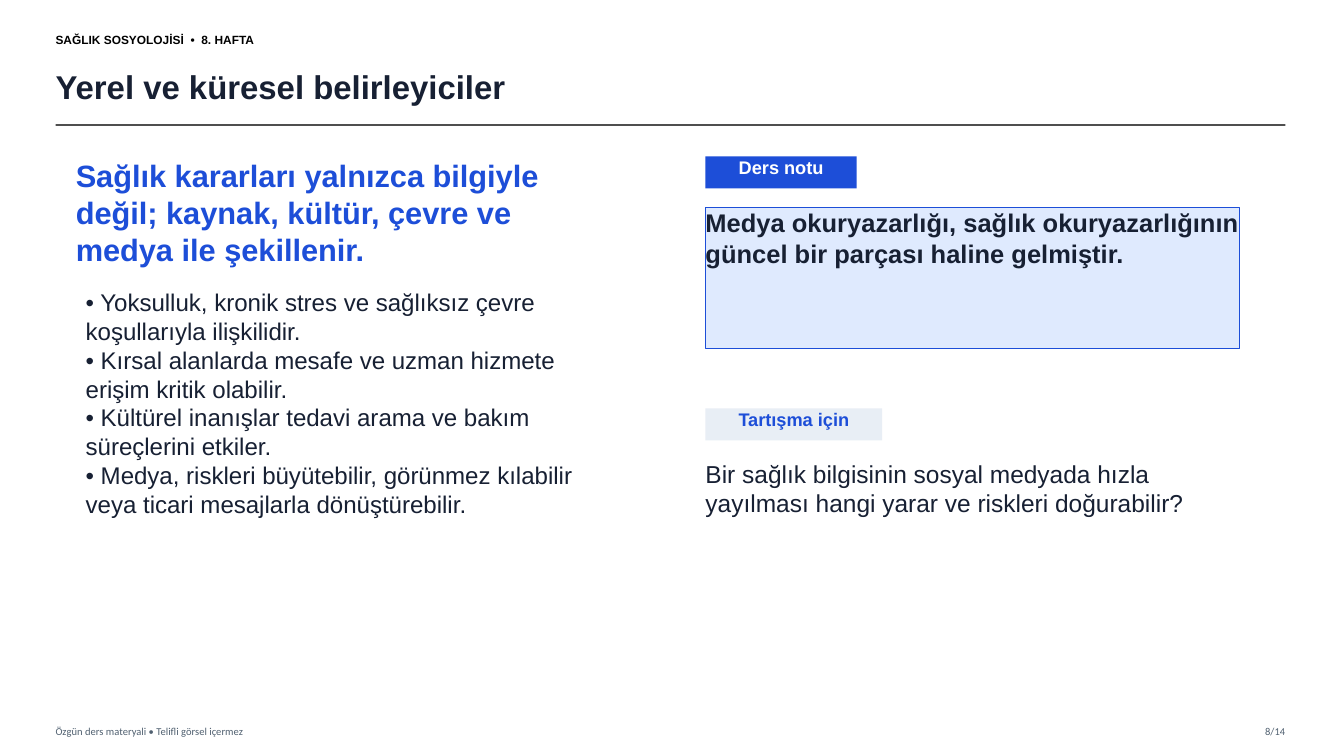
import dataclasses

import lxml.etree
import pptx
import pptx.dml.color
import pptx.enum.shapes
import pptx.enum.text
import pptx.oxml.ns
import pptx.util

Cm = pptx.util.Cm
Align = pptx.enum.text.PP_ALIGN
Anchor = pptx.enum.text.MSO_ANCHOR


@dataclasses.dataclass(frozen=True)
class TextStyle:
    size: float
    color: str
    bold: bool = False
    font: str = "Arial"


@dataclasses.dataclass(frozen=True)
class Theme:
    background: str = "FFFFFF"
    rule: str = "333333"
    accent: str = "1D4ED8"
    note_fill: str = "DFEAFE"
    label_fill: str = "E8EEF5"
    course: TextStyle = TextStyle(8.5, "000000", True)
    title: TextStyle = TextStyle(23.5, "172033", True)
    message: TextStyle = TextStyle(22, "1D4ED8", True)
    body: TextStyle = TextStyle(17.2, "172033")
    note: TextStyle = TextStyle(18.2, "172033", True)
    question: TextStyle = TextStyle(17.5, "172033")
    light_label: TextStyle = TextStyle(13, "FFFFFF", True)
    accent_label: TextStyle = TextStyle(13, "1D4ED8", True)
    footer: TextStyle = TextStyle(7.5, "506070", font="Calibri")


def rgb(color):
    return pptx.dml.color.RGBColor.from_string(color)


class SlideBuilder:
    def __init__(self, slide, theme):
        self.slide = slide
        self.theme = theme
        slide.background.fill.solid()
        slide.background.fill.fore_color.rgb = rgb(theme.background)

    def fill_text(self, shape, text, style, align=Align.LEFT, anchor=Anchor.TOP):
        frame = shape.text_frame
        frame.text = text
        frame.word_wrap = True
        frame.vertical_anchor = anchor
        frame.margin_left = frame.margin_right = 0
        frame.margin_top = frame.margin_bottom = 0
        for paragraph in frame.paragraphs:
            paragraph.alignment = align
            for run in paragraph.runs:
                run.font.name = style.font
                run.font.size = pptx.util.Pt(style.size)
                run.font.bold = style.bold
                run.font.color.rgb = rgb(style.color)

    def text(self, left, top, width, height, text, style, **layout):
        shape = self.slide.shapes.add_textbox(Cm(left), Cm(top), Cm(width), Cm(height))
        self.fill_text(shape, text, style, **layout)

    def panel(self, left, top, width, height, fill, text, style, border=None, **layout):
        shape = self.slide.shapes.add_shape(
            pptx.enum.shapes.MSO_SHAPE.RECTANGLE, Cm(left), Cm(top), Cm(width), Cm(height)
        )
        shape.shadow.inherit = False
        shape.fill.solid()
        shape.fill.fore_color.rgb = rgb(fill)
        if border:
            shape.line.color.rgb = rgb(border)
            shape.line.width = pptx.util.Pt(1)
        else:
            shape.line.fill.background()
        self.fill_text(shape, text, style, **layout)

    def label(self, left, top, width, fill, text, style):
        self.panel(left, top, width, 0.81, fill, text, style, align=Align.CENTER)

    def rule(self, left, right, top):
        line = self.slide.shapes.add_connector(
            pptx.enum.shapes.MSO_CONNECTOR.STRAIGHT, Cm(left), Cm(top), Cm(right), Cm(top)
        )
        line.line.color.rgb = rgb(self.theme.rule)
        line.line.width = pptx.util.Pt(1.2)
        qn = pptx.oxml.ns.qn
        properties = line._element.spPr
        color = properties.find(".//" + qn("a:srgbClr"))
        lxml.etree.SubElement(color, qn("a:alpha")).set("val", "85000")
        lxml.etree.SubElement(properties, qn("a:effectLst"))


def main():
    presentation = pptx.Presentation()
    presentation.slide_width = Cm(33.87)
    presentation.slide_height = Cm(19.05)
    theme = Theme()
    builder = SlideBuilder(presentation.slides.add_slide(presentation.slide_layouts[6]), theme)

    margin, right_edge = 1.4, 32.39
    builder.text(margin, 0.64, 9.14, 0.71, "SAĞLIK SOSYOLOJİSİ  •  8. HAFTA",
                 theme.course, anchor=Anchor.MIDDLE)
    builder.text(margin, 1.47, 30.35, 1.4, "Yerel ve küresel belirleyiciler",
                 theme.title, anchor=Anchor.MIDDLE)
    builder.rule(margin, right_edge, 3.15)

    content_top = 3.94
    builder.text(1.91, content_top, 11.68, 2.54,
                 "Sağlık kararları yalnızca bilgiyle değil; kaynak, kültür, çevre ve "
                 "medya ile şekillenir.", theme.message)
    determinants = [
        "• Yoksulluk, kronik stres ve sağlıksız çevre koşullarıyla ilişkilidir.",
        "• Kırsal alanlarda mesafe ve uzman hizmete erişim kritik olabilir.",
        "• Kültürel inanışlar tedavi arama ve bakım süreçlerini etkiler.",
        "• Medya, riskleri büyütebilir, görünmez kılabilir veya ticari mesajlarla dönüştürebilir.",
    ]
    builder.text(2.16, 7.24, 13.34, 6.86, "\n".join(determinants), theme.body)

    column, column_width = 17.78, 13.46
    builder.label(column, content_top, 3.81, theme.accent, "Ders notu", theme.light_label)
    builder.panel(column, 5.23, column_width, 3.56, theme.note_fill,
                  "Medya okuryazarlığı, sağlık okuryazarlığının güncel bir parçası "
                  "haline gelmiştir.", theme.note, border=theme.accent)
    builder.label(column, 10.29, 4.45, theme.label_fill, "Tartışma için", theme.accent_label)
    builder.text(column, 11.56, column_width, 3.18,
                 "Bir sağlık bilgisinin sosyal medyada hızla yayılması hangi yarar ve "
                 "riskleri doğurabilir?", theme.question)

    footer_top, footer_height, number_width = 18.14, 0.56, 1.65
    builder.text(margin, footer_top, 15.24, footer_height,
                 "Özgün ders materyali • Telifli görsel içermez",
                 theme.footer, anchor=Anchor.MIDDLE)
    builder.text(right_edge - number_width, footer_top, number_width, footer_height, "8/14",
                 theme.footer, align=Align.RIGHT, anchor=Anchor.MIDDLE)

    presentation.save("out.pptx")


if __name__ == "__main__":
    main()
